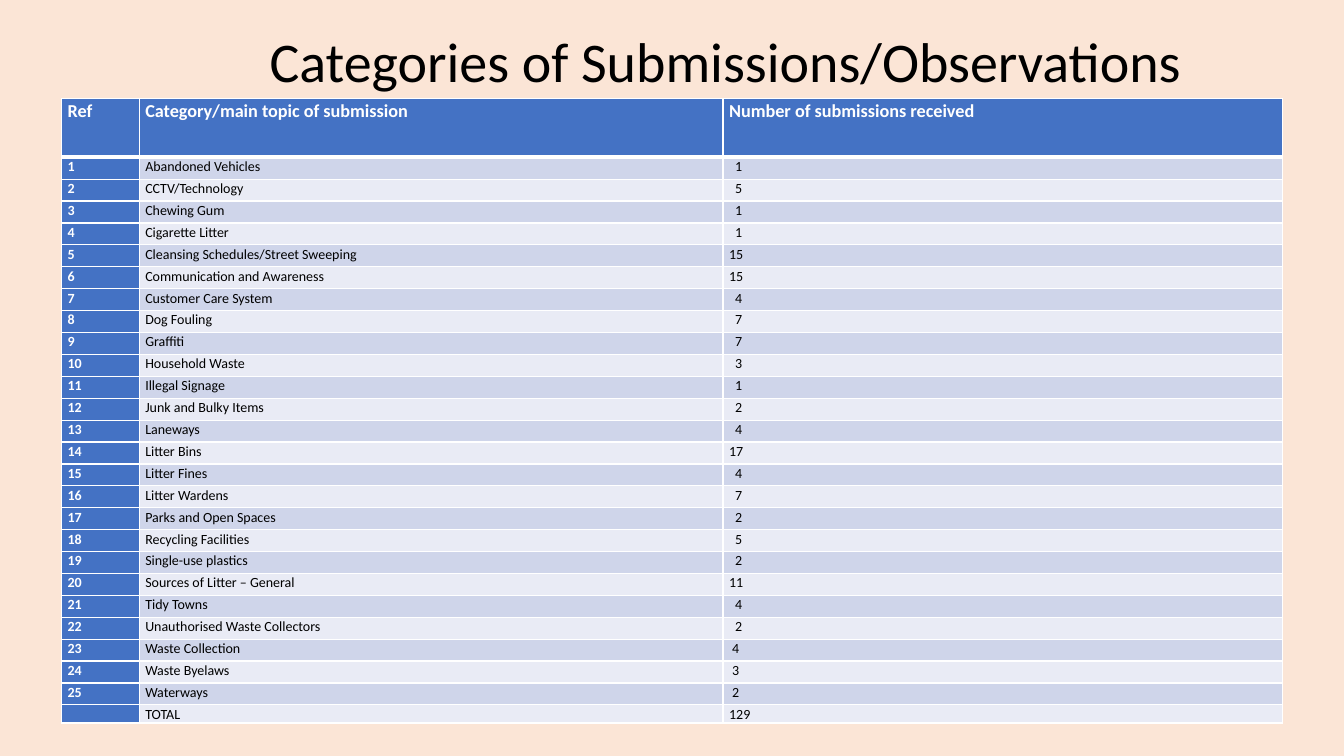
from lxml import etree
from pptx import Presentation
from pptx import util as u
from pptx.dml.color import RGBColor
from pptx.enum import text
from pptx.oxml import ns

PEACH = RGBColor(0xFB, 0xE5, 0xD6)
BLUE = RGBColor(0x44, 0x72, 0xC4)
DARK = RGBColor(0xCF, 0xD5, 0xEA)
PALE = RGBColor(0xE9, 0xEB, 0xF5)
WHITE = RGBColor(0xFF, 0xFF, 0xFF)
BLACK = RGBColor(0, 0, 0)

WIDTH, HEIGHT = u.Inches(13.33), u.Inches(7.5)

TITLE = dict(name="Calibri", size=u.Pt(40))
HEAD = dict(name="Calibri", size=u.Pt(13), bold=True)
REF = dict(name="Calibri", size=u.Pt(10), bold=True)
BODY = dict(name="Calibri", size=u.Pt(10), bold=False)

# Shares of the slide in percent
COLS = [5.78, 43.44, 41.64]
HEAD_ROW, BODY_ROW, TOTAL_ROW = 7.73, 2.9, 2.4
INSET = 0.45
STEP = 0.22  # indent that lines up short counts

HEADS = ["Ref", "Category/main topic of submission",
         "Number of submissions received"]
TOPICS = [
    ("Abandoned Vehicles", 1), ("CCTV/Technology", 5), ("Chewing Gum", 1),
    ("Cigarette Litter", 1), ("Cleansing Schedules/Street Sweeping", 15),
    ("Communication and Awareness", 15), ("Customer Care System", 4),
    ("Dog Fouling", 7), ("Graffiti", 7), ("Household Waste", 3),
    ("Illegal Signage", 1), ("Junk and Bulky Items", 2), ("Laneways", 4),
    ("Litter Bins", 17), ("Litter Fines", 4), ("Litter Wardens", 7),
    ("Parks and Open Spaces", 2), ("Recycling Facilities", 5),
    ("Single-use plastics", 2), ("Sources of Litter – General", 11),
    ("Tidy Towns", 4), ("Unauthorised Waste Collectors", 2),
    ("Waste Collection", 4), ("Waste Byelaws", 3), ("Waterways", 2),
]
NARROW_FROM = 23  # from this reference on, short counts are indented less


def wide(share):
    return round(WIDTH * share / 100)


def high(share):
    return round(HEIGHT * share / 100)


def write(para, words, style, color):
    run = para.add_run()
    run.text = words
    for key, value in style.items():
        setattr(run.font, key, value)
    run.font.color.rgb = color


def add_title(slide, words):
    box = slide.shapes.add_textbox(wide(16.13), high(2.8),
                                   wide(74.72), high(10.27))
    frame = box.text_frame
    frame.word_wrap = True
    frame.auto_size = text.MSO_AUTO_SIZE.SHAPE_TO_FIT_TEXT
    para = frame.paragraphs[0]
    para.alignment = text.PP_ALIGN.CENTER
    write(para, words, TITLE, BLACK)


def edge(cell, base):
    """Draw white borders, the bottom one base points wide."""
    props = cell._tc.get_or_add_tcPr()
    for spot, (side, points) in enumerate(
            [("L", 1), ("R", 1), ("T", 1), ("B", base)]):
        line = etree.Element(ns.qn("a:ln" + side), w=str(u.Pt(points)))
        fill = etree.SubElement(line, ns.qn("a:solidFill"))
        etree.SubElement(fill, ns.qn("a:srgbClr"), val=str(WHITE))
        props.insert(spot, line)


def set_cell(cell, words, style, color, fill, indent=0, base=1):
    margins = dict(margin_left=wide(INSET + indent), margin_right=wide(INSET),
                   margin_top=0, margin_bottom=0)
    for key, value in margins.items():
        setattr(cell, key, value)
    cell.fill.solid()
    cell.fill.fore_color.rgb = fill
    edge(cell, base)
    para = cell.text_frame.paragraphs[0]
    para.line_spacing = 1.07
    if words:
        write(para, words, style, color)
    else:
        end = etree.SubElement(para._p, ns.qn("a:endParaRPr"))
        end.set("sz", str(int(style["size"].pt * 100)))


def indent_of(ref, count):
    if count > 9:
        return 0
    return STEP if ref >= NARROW_FROM else 2 * STEP


def add_grid(slide):
    rows = [HEAD_ROW] + [BODY_ROW] * len(TOPICS) + [TOTAL_ROW]
    frame = slide.shapes.add_table(len(rows), len(COLS), wide(4.58),
                                   high(13.07), wide(sum(COLS)),
                                   high(sum(rows)))
    table = frame.table
    table.first_col = True
    for col, share in zip(table.columns, COLS):
        col.width = wide(share)
    for row, share in zip(table.rows, rows):
        row.height = high(share)

    for col, words in enumerate(HEADS):
        set_cell(table.cell(0, col), words, HEAD, WHITE, BLUE, base=3)
    total = sum(count for _, count in TOPICS)
    for row, (topic, count) in enumerate(TOPICS + [("TOTAL", total)], 1):
        ref = str(row) if row <= len(TOPICS) else ""
        band = DARK if row % 2 else PALE
        set_cell(table.cell(row, 0), ref, REF, WHITE, BLUE)
        set_cell(table.cell(row, 1), topic, BODY, BLACK, band)
        set_cell(table.cell(row, 2), str(count), BODY, BLACK, band,
                 indent_of(row, count))


def main():
    deck = Presentation()
    deck.slide_width, deck.slide_height = WIDTH, HEIGHT
    slide = deck.slides.add_slide(deck.slide_layouts[6])
    slide.background.fill.solid()
    slide.background.fill.fore_color.rgb = PEACH
    add_title(slide, " Categories of Submissions/Observations")
    add_grid(slide)
    deck.save("out.pptx")


if __name__ == "__main__":
    main()
